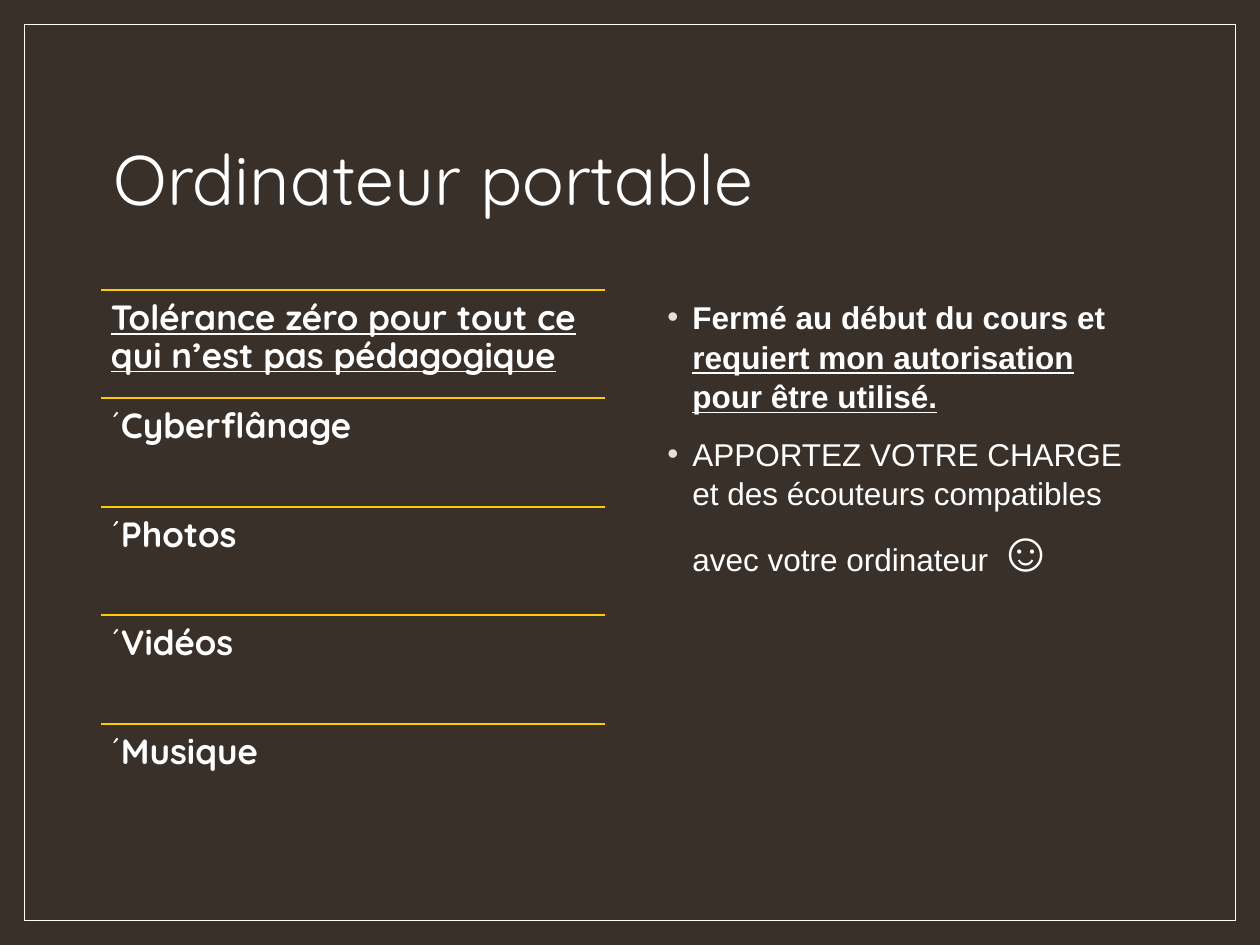
from dataclasses import dataclass

from lxml.etree import SubElement
from pptx import Presentation
from pptx.dml.color import RGBColor
from pptx.enum.shapes import MSO_CONNECTOR as Connector, MSO_SHAPE as Shape
from pptx.enum.text import MSO_ANCHOR as Anchor, PP_ALIGN as Align
from pptx.oxml.ns import qn
from pptx.util import Emu, Pt

EMU_PER_PX = 914400 / 126
TITLE_ONLY = 5


def px(length):
    return Emu(round(length * EMU_PER_PX))


def apply(target, values):
    for name, value in values.items():
        setattr(target, name, value)


@dataclass(frozen=True)
class Theme:
    background: str = "39302A"
    text: str = "FFFFFF"
    rule: str = "FFCA08"
    bullet: str = "E5DEDB"
    heading_font: str = "Quicksand"
    body_font: str = "Arial"
    title_size: int = 40
    list_size: int = 20
    body_size: int = 18
    smiley_size: int = 32


class SlideBuilder:
    """Holds the theme and the slide being filled."""

    def __init__(self, theme, page):
        self.theme = theme
        self.page = page
        fill = page.background.fill
        fill.solid()
        fill.fore_color.rgb = RGBColor.from_string(theme.background)

    def add_spans(self, para, spans, font, size):
        """Add (text, format) spans to a paragraph."""
        for text, extra in spans:
            span = para.add_run()
            span.text = text
            apply(span.font, {"name": font, "size": Pt(size), **extra})
            span.font.color.rgb = RGBColor.from_string(self.theme.text)

    def line_style(self, line, color, width):
        line.color.rgb = RGBColor.from_string(color)
        line.width = Pt(width)

    def frame(self, *area):
        shape = self.page.shapes.add_shape(Shape.RECTANGLE, *map(px, area))
        shape.shadow.inherit = False
        shape.fill.background()
        self.line_style(shape.line, self.theme.text, 0.5)

    def title(self, text, *area):
        box = self.page.shapes.title
        apply(box, dict(zip(("left", "top", "width", "height"), map(px, area))))
        apply(box.text_frame, {"word_wrap": True, "vertical_anchor": Anchor.MIDDLE})
        para = box.text_frame.paragraphs[0]
        apply(para, {"alignment": Align.LEFT, "line_spacing": 0.9})
        self.add_spans(para, [(text, {})], self.theme.heading_font, self.theme.title_size)

    def rule(self, left, top, width):
        line = self.page.shapes.add_connector(
            Connector.STRAIGHT, px(left), px(top), px(left + width), px(top))
        self.line_style(line.line, self.theme.rule, 1)
        SubElement(line._element.spPr, qn("a:effectLst"))

    def text_box(self, *area):
        frame = self.page.shapes.add_textbox(*map(px, area)).text_frame
        frame.word_wrap = True
        return frame

    def ruled_list(self, items, left, top, width, height):
        """Stack equal rows, each with a line along its top."""
        pitch = height / len(items)
        for index, spans in enumerate(items):
            row_top = round(top + index * pitch)
            self.rule(left, row_top, width)
            frame = self.text_box(left, row_top, width, round(pitch))
            apply(frame, {f"margin_{side}": px(10)
                          for side in ("left", "top", "right", "bottom")})
            para = frame.paragraphs[0]
            para.line_spacing = 0.9
            self.add_spans(para, spans, self.theme.heading_font, self.theme.list_size)

    def bullets(self, items, *area):
        frame = self.text_box(*area)
        for index, spans in enumerate(items):
            para = frame.add_paragraph() if index else frame.paragraphs[0]
            apply(para, {"line_spacing": 1.05, "space_before": Pt(10 if index else 0)})
            props = para._p.get_or_add_pPr()
            props.set("marL", str(px(25)))
            props.set("indent", str(-px(25)))
            color = SubElement(props, qn("a:buClr"))
            SubElement(color, qn("a:srgbClr"), val=self.theme.bullet)
            SubElement(props, qn("a:buFont"), typeface=self.theme.body_font)
            SubElement(props, qn("a:buChar"), char="•")
            self.add_spans(para, spans, self.theme.body_font, self.theme.body_size)


def main():
    theme = Theme()
    deck = Presentation()
    apply(deck, {"slide_width": px(1260), "slide_height": px(945)})
    page = deck.slides.add_slide(deck.slide_layouts[TITLE_ONLY])
    slide = SlideBuilder(theme, page)

    bold = {"bold": True}
    stressed = {"bold": True, "underline": True}
    distractions = ["Cyberflânage", "Photos", "Vidéos", "Musique"]

    slide.frame(24, 24, 1212, 897)
    slide.title("Ordinateur portable", 101, 88, 1058, 189)
    slide.ruled_list(
        [[("Tolérance zéro pour tout ce qui n’est pas pédagogique", stressed)]]
        + [[("´", {}), (name, bold)] for name in distractions],
        101, 290, 504, 542)
    slide.bullets(
        [[("Fermé au début du cours et ", bold),
          ("requiert mon autorisation pour être utilisé.", stressed)],
         [("APPORTEZ VOTRE CHARGE et des écouteurs compatibles "
           "avec votre ordinateur ", {}),
          ("☺", {"size": Pt(theme.smiley_size)})]],
        655, 290, 504, 542)
    deck.save("out.pptx")


if __name__ == "__main__":
    main()
